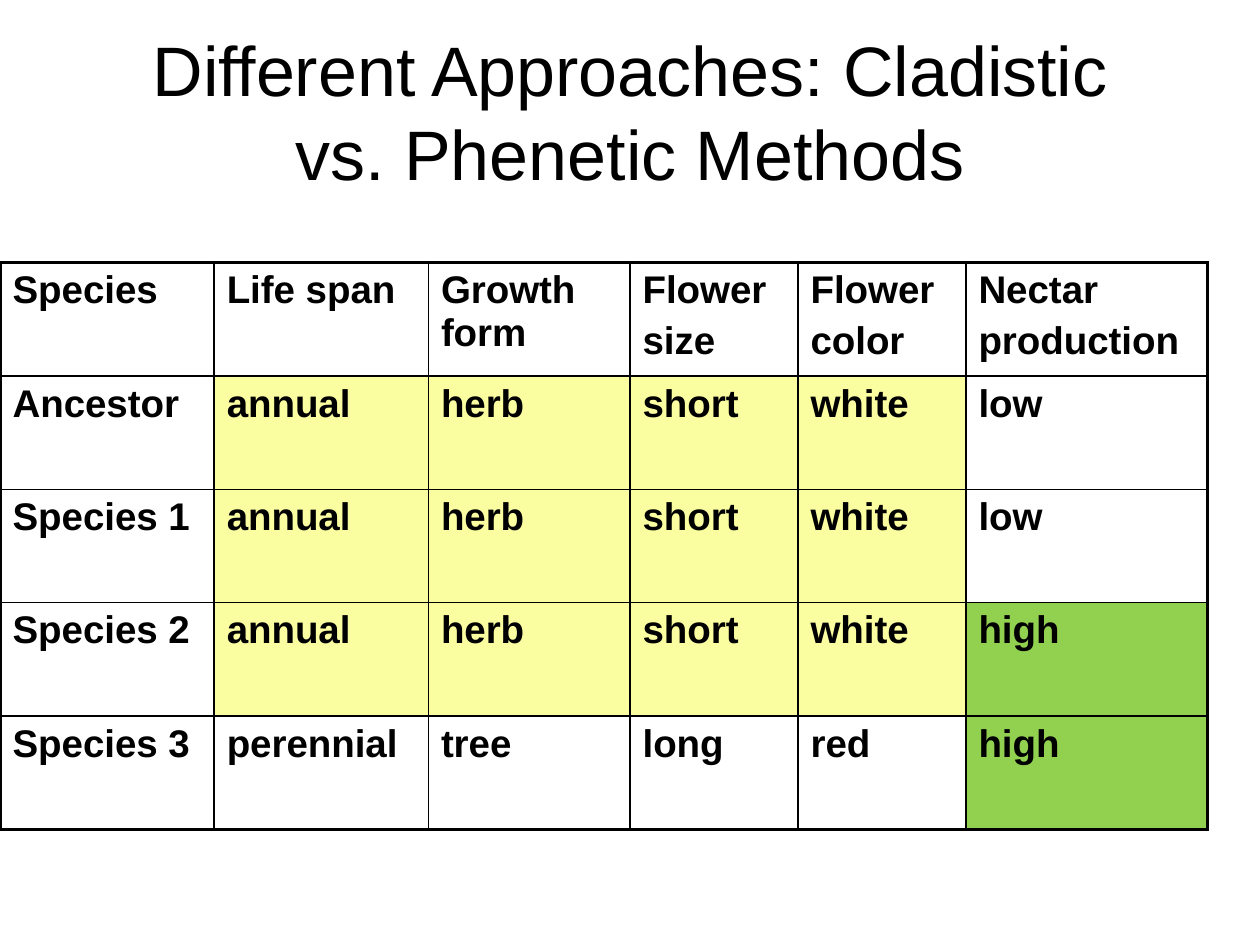
import pptx
import pptx.util
import pptx.dml.color
import pptx.enum.text
import pptx.oxml.ns
from lxml import etree
from pptx.util import Pt

TITLE = "Different Approaches: Cladistic vs. Phenetic Methods"
# A cell is its lines of text
HEADER = [["Species"], ["Life span"], ["Growth form"], ["Flower", "size"],
          ["Flower", "color"], ["Nectar", "production"]]
SPECIES = [
    ["Ancestor", "annual", "herb", "short", "white", "low"],
    ["Species 1", "annual", "herb", "short", "white", "low"],
    ["Species 2", "annual", "herb", "short", "white", "high"],
    ["Species 3", "perennial", "tree", "long", "red", "high"],
]
COL_WIDTHS = [122.4, 122.4, 115.2, 96, 96, 138]
ROW_HEIGHT = 64.8
TABLE_TOP = 150
THEME = {
    "font": "Arial", "title": 40, "cell": 22, "para_gap": 4.4,
    "text": "000000", "border": "000000", "outer": 2.25, "inner": 1,
    "ancestral": "FBFDA1", "nectar": "92D050",
}
ANCESTRAL_STATES = {"annual", "herb", "short", "white"}


def rgb(name):
    return pptx.dml.color.RGBColor.from_string(THEME[name])


def add_run(p, text, size, bold=False):
    r = p.add_run()
    r.text = text
    r.font.name = THEME["font"]
    r.font.size = Pt(THEME[size])
    r.font.bold = bold
    r.font.color.rgb = rgb("text")


def add_title(slide):
    sp = slide.shapes.add_textbox(Pt(54), Pt(18), Pt(612), Pt(90))
    tf = sp.text_frame
    tf.word_wrap = True
    tf.vertical_anchor = pptx.enum.text.MSO_ANCHOR.MIDDLE
    p = tf.paragraphs[0]
    p.alignment = pptx.enum.text.PP_ALIGN.CENTER
    add_run(p, TITLE, "title")


def set_borders(cell, outer_sides):
    """Draw all four sides, heavier where the side is on the table's edge."""
    qn = pptx.oxml.ns.qn
    tc_pr = cell._tc.get_or_add_tcPr()
    for i, side in enumerate(["L", "R", "T", "B"]):
        width = THEME["outer" if side in outer_sides else "inner"]
        ln = etree.Element(qn(f"a:ln{side}"), w=str(Pt(width)))
        fill = etree.SubElement(ln, qn("a:solidFill"))
        etree.SubElement(fill, qn("a:srgbClr"), val=THEME["border"])
        tc_pr.insert(i, ln)


def fill_cell(cell, lines):
    if lines[0] in ANCESTRAL_STATES or lines[0] == "high":
        cell.fill.solid()
        cell.fill.fore_color.rgb = rgb("nectar" if lines[0] == "high" else "ancestral")
    else:
        cell.fill.background()
    tf = cell.text_frame
    for i, line in enumerate(lines):
        p = tf.add_paragraph() if i else tf.paragraphs[0]
        if i:
            p.space_before = Pt(THEME["para_gap"])
        add_run(p, line, "cell", bold=True)


def add_trait_table(slide):
    rows = [HEADER] + [[[state] for state in row] for row in SPECIES]
    n_rows, n_cols = len(rows), len(COL_WIDTHS)
    table = slide.shapes.add_table(
        n_rows, n_cols, Pt(0), Pt(TABLE_TOP),
        Pt(sum(COL_WIDTHS)), Pt(ROW_HEIGHT * n_rows)).table
    table.first_row = table.horz_banding = False
    for column, width in zip(table.columns, COL_WIDTHS):
        column.width = Pt(width)
    for r, row in enumerate(rows):
        table.rows[r].height = Pt(ROW_HEIGHT)
        for c, lines in enumerate(row):
            edges = {"L": c == 0, "R": c == n_cols - 1,
                     "T": r == 0, "B": r == n_rows - 1}
            cell = table.cell(r, c)
            fill_cell(cell, lines)
            set_borders(cell, {side for side, on_edge in edges.items() if on_edge})


def main():
    prs = pptx.Presentation()
    prs.slide_width, prs.slide_height = Pt(720), Pt(540)
    slide = prs.slides.add_slide(prs.slide_layouts[6])
    add_title(slide)
    add_trait_table(slide)
    prs.save("out.pptx")


if __name__ == "__main__":
    main()
